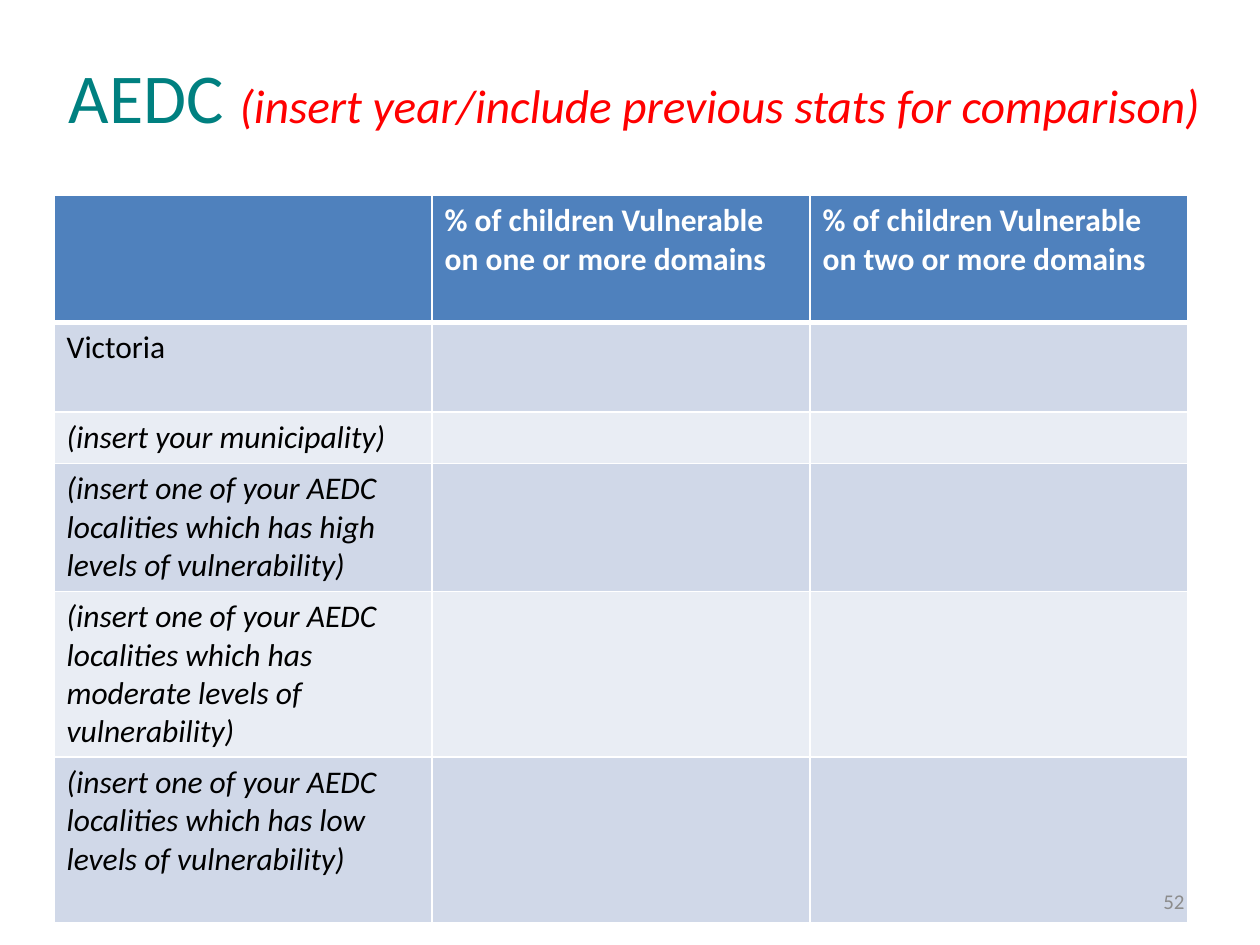
"""Build the AEDC vulnerability table slide."""
from dataclasses import dataclass

from lxml.etree import SubElement as Sub
from pptx import Presentation
from pptx.dml.color import RGBColor as Rgb
from pptx.enum.text import MSO_ANCHOR as Anchor, PP_ALIGN as Align
from pptx.oxml import parse_xml
from pptx.oxml.ns import nsdecls, qn
from pptx.util import Cm, Pt


@dataclass(frozen=True)
class Theme:
    font: str = "Calibri"
    teal: str = "008080"
    red: str = "FF0000"
    white: str = "FFFFFF"
    black: str = "000000"
    grey: str = "8C8C8C"
    head: str = "4F81BD"
    bands: tuple = ("D0D8E8", "E9EDF4")
    title: int = 40
    hint: int = 27
    body: int = 18
    small: int = 12
    thin: int = 1
    thick: int = 3


THEME = Theme()
LOCAL = "(insert one of your AEDC localities which has {} levels of vulnerability)"
HEADS = ["", *(f"% of children Vulnerable on {n} or more domains" for n in ("one", "two"))]
AREAS = ["Victoria", "(insert your municipality)",
         *(LOCAL.format(level) for level in ("high", "moderate", "low"))]
HEIGHTS = [2.56, 1.81, 1.03, 2.58, 3.34, 3.34]


def style(run, size, color, bold=False, italic=False):
    font = run.font
    font.name, font.size = THEME.font, Pt(size)
    font.bold, font.italic = bold, italic
    font.color.rgb = Rgb.from_string(color)


def add_text(slide, box, parts, align):
    frame = slide.shapes.add_textbox(*map(Cm, box)).text_frame
    frame.word_wrap = True
    frame.vertical_anchor = Anchor.MIDDLE
    para = frame.paragraphs[0]
    para.alignment = align
    for text, size, color, italic in parts:
        run = para.add_run()
        run.text = text
        style(run, size, color, italic=italic)


def edge(cell, side, width):
    line = parse_xml(f'<a:ln{side} {nsdecls("a")} w="{Pt(width)}"/>')
    fill = Sub(line, qn("a:solidFill"))
    Sub(fill, qn("a:srgbClr"), val=THEME.white)
    return line


def fill_cell(cell, text, fill, color, bold=False, italic=False, base=THEME.thin, top=THEME.thin):
    cell.fill.solid()
    cell.fill.fore_color.rgb = Rgb.from_string(fill)
    widths = {"L": THEME.thin, "R": THEME.thin, "T": top, "B": base}
    props = cell._tc.get_or_add_tcPr()
    for spot, (side, width) in enumerate(widths.items()):
        props.insert(spot, edge(cell, side, width))
    if text:
        cell.text_frame.text = text
        style(cell.text_frame.paragraphs[0].runs[0], THEME.body, color, bold, italic)


def add_grid(slide):
    size = len(HEIGHTS), len(HEADS)
    box = 1.09, 3.94, 22.86, sum(HEIGHTS)
    table = slide.shapes.add_table(*size, *map(Cm, box)).table
    for row, height in zip(table.rows, HEIGHTS):
        row.height = Cm(height)
    for col, text in enumerate(HEADS):
        fill_cell(table.cell(0, col), text, THEME.head, THEME.white, bold=True, base=THEME.thick)
    for row, area in enumerate(AREAS, 1):
        band = THEME.bands[(row - 1) % 2]
        top = THEME.thick if row == 1 else THEME.thin
        for col in range(len(HEADS)):
            text = "" if col else area
            fill_cell(table.cell(row, col), text, band, THEME.black,
                      italic=text.startswith("("), top=top)


def main():
    deck = Presentation()
    deck.slide_width, deck.slide_height = Cm(25.4), Cm(19.05)
    slide = deck.slides.add_slide(deck.slide_layouts[6])
    title = [("AEDC ", THEME.title, THEME.teal, False),
             ("(insert year/include previous stats for comparison)", THEME.hint, THEME.red, True)]
    add_text(slide, (1.09, 0.33, 23.4, 3.18), title, Align.CENTER)
    add_grid(slide)
    add_text(slide, (18.21, 17.65, 5.92, 1.02), [("52", THEME.small, THEME.grey, False)], Align.RIGHT)
    deck.save("out.pptx")


if __name__ == "__main__":
    main()
